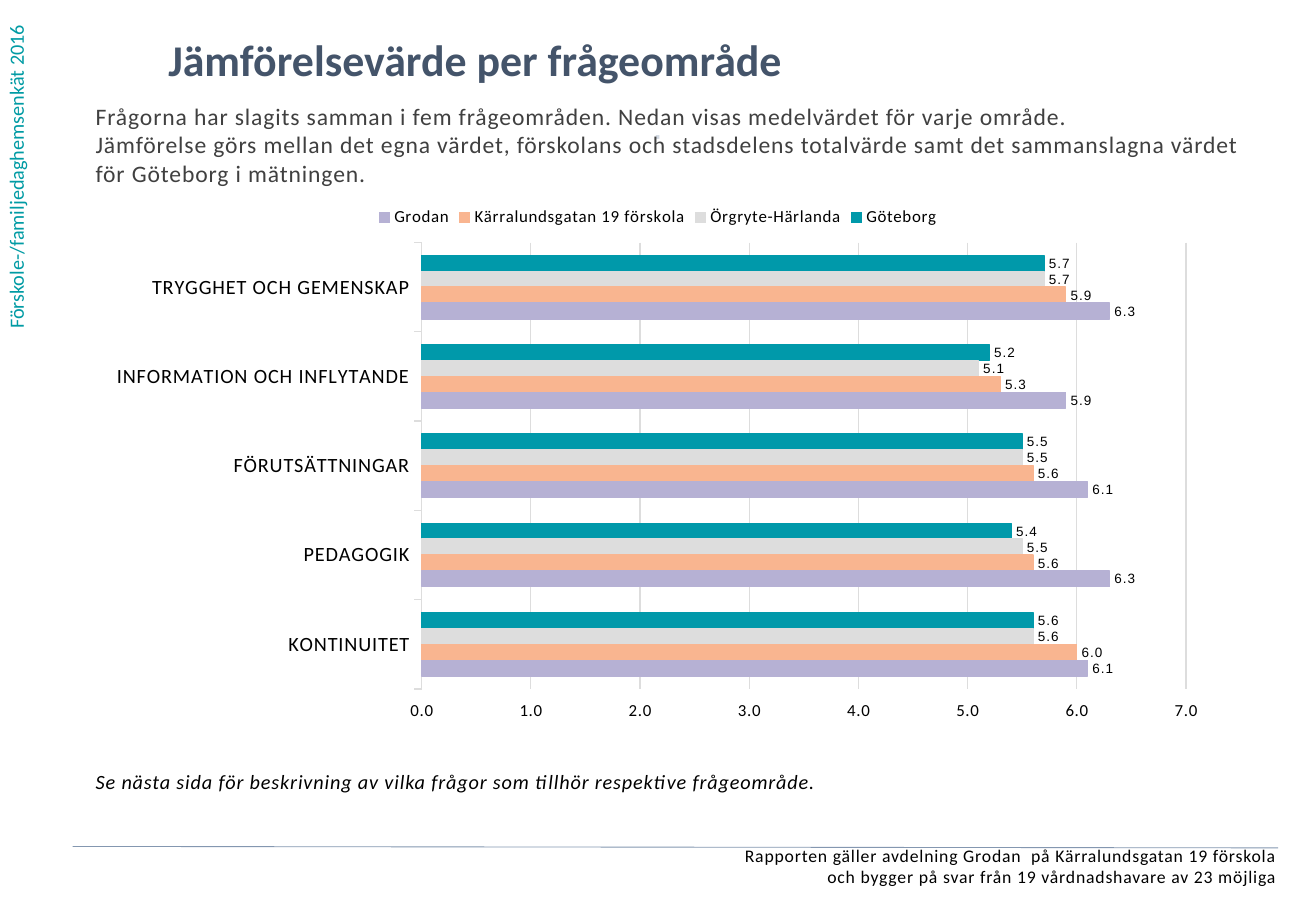
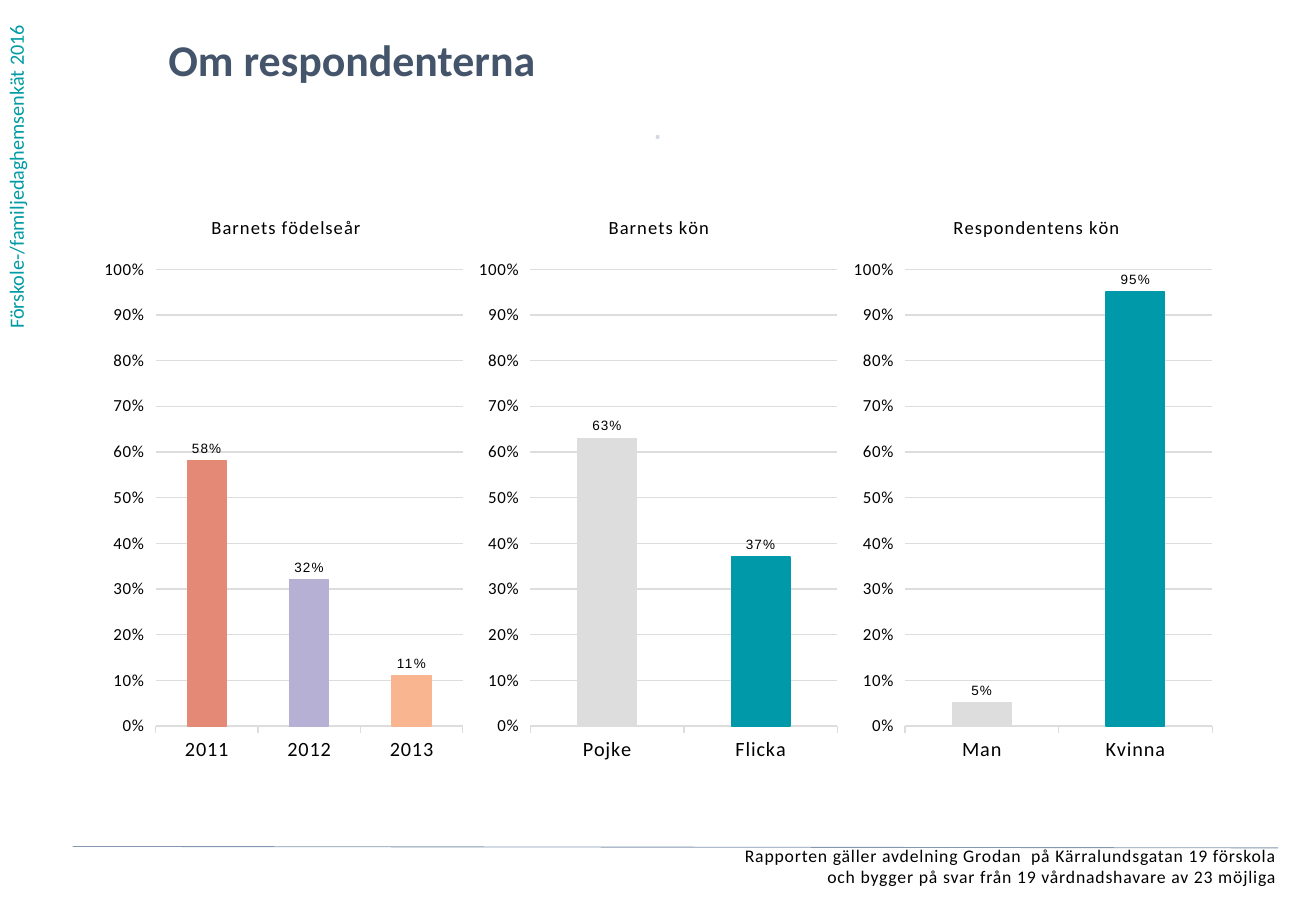
from lxml import etree
from pptx import Presentation
from pptx.chart.data import CategoryChartData
from pptx.dml.color import RGBColor
from pptx.enum.chart import XL_CHART_TYPE, XL_LABEL_POSITION, XL_LEGEND_POSITION, XL_TICK_LABEL_POSITION
from pptx.enum.shapes import MSO_CONNECTOR
from pptx.enum.text import PP_ALIGN
from pptx.oxml.ns import qn
from pptx.util import Cm, Pt

BAR, COLUMN = XL_CHART_TYPE.BAR_CLUSTERED, XL_CHART_TYPE.COLUMN_CLUSTERED
LEFT, CENTER, RIGHT = PP_ALIGN.LEFT, PP_ALIGN.CENTER, PP_ALIGN.RIGHT
OUTSIDE = XL_LABEL_POSITION.OUTSIDE_END
TOP = XL_LEGEND_POSITION.TOP
HIGH = XL_TICK_LABEL_POSITION.HIGH
STRAIGHT = MSO_CONNECTOR.STRAIGHT

COLORS = {
    "side": "009BA4", "title": "44546A", "intro": "404040", "text": "000000",
    "dot": "D2D9E2", "rule": "8497B0", "teal": "0099AA", "gray": "DDDDDD",
    "peach": "F9B590", "lilac": "B6B1D4", "coral": "E58977",
}
FONT, LABEL_FONT = "Calibri", "Arial"
SIDE_TEXT = "Förskole-/familjedaghemsenkät 2016"
FOOTER = ["Rapporten gäller avdelning Grodan  på Kärralundsgatan 19 förskola",
          "och bygger på svar från 19 vårdnadshavare av 23 möjliga"]

CONTENT_LEFT, CONTENT_TOP, CONTENT_WIDTH = 2, 4.06, 23.5
COLUMN_WIDTH = CONTENT_WIDTH / 3


def color(name):
    return RGBColor.from_string(COLORS[name])


def paint(fmt, name):
    """Give a chart element the same fill and outline colour."""
    fmt.fill.solid()
    fmt.fill.fore_color.rgb = color(name)
    outline(fmt.line, name)


def outline(line, name, width=0.75):
    line.color.rgb = color(name)
    line.width = Pt(width)


def set_layout(parent, index, inner=False, **fractions):
    """Place a chart part by fractions of the chart area."""
    for old in parent.findall(qn("c:layout")):
        parent.remove(old)
    layout = etree.Element(qn("c:layout"))
    manual = etree.SubElement(layout, qn("c:manualLayout"))
    values = {"layoutTarget": "inner"} if inner else {}
    values.update(xMode="edge", yMode="edge", **fractions)
    for tag, value in values.items():
        etree.SubElement(manual, qn(f"c:{tag}")).set("val", str(value))
    parent.insert(index, layout)


class Deck:
    def __init__(self):
        self.prs = Presentation()
        self.prs.slide_width, self.prs.slide_height = Cm(27.51), Cm(19.05)
        self.slide = None

    def add_slide(self, title):
        self.slide = self.prs.slides.add_slide(self.prs.slide_layouts[6])
        side = self.text([SIDE_TEXT], -0.05, 0, 1.02, 7.13, 12, "side",
                         spacing=0, inset=None)
        side.text_frame._txBody.bodyPr.set("vert", "vert270")
        self.text([title], 3.52, 0.69, 21.18, 1.45, 26, "title", bold=True, spacing=0)
        self.text(FOOTER, 0.27, 17.66, 26.42, 1.09, 10.5, align=RIGHT)
        self.text(["⋅"], CONTENT_LEFT + COLUMN_WIDTH, 2.59, COLUMN_WIDTH, 0.99, 12,
                  "dot", bold=True, align=CENTER)
        self.line(1.52, 17.7, 26.72, 17.73)

    def text(self, lines, x, y, w, h, size, name="text", bold=False, italic=False,
             align=LEFT, spacing=50, inset=0):
        """Add a text box; spacing is in hundredths of a point, inset None keeps the default."""
        sp = self.slide.shapes.add_textbox(Cm(x), Cm(y), Cm(w), Cm(h))
        tf = sp.text_frame
        tf.word_wrap = True
        if inset is not None:
            tf.margin_left = tf.margin_right = tf.margin_top = tf.margin_bottom = Cm(inset)
        tf.text = "\n".join(lines)
        for p in tf.paragraphs:
            p.alignment = align
            for r in p.runs:
                r.font.name, r.font.size = FONT, Pt(size)
                r.font.bold, r.font.italic = bold, italic
                r.font.color.rgb = color(name)
                r._r.get_or_add_rPr().set("spc", str(spacing))
        return sp

    def line(self, x1, y1, x2, y2):
        cxn = self.slide.shapes.add_connector(STRAIGHT, Cm(x1), Cm(y1), Cm(x2), Cm(y2))
        outline(cxn.line, "rule", 0.5)
        etree.SubElement(cxn._element.spPr, qn("a:effectLst"))

    def chart(self, kind, x, w, h, categories, series, number_format, maximum, unit, plot_box,
              title=None, title_x=0, point_colors=()):
        """Add a bar or column chart; series holds (name, colour, values)."""
        data = CategoryChartData(number_format=number_format)
        data.categories = categories
        for name, _, values in series:
            data.add_series(name, values)
        chart = self.slide.shapes.add_chart(
            kind, Cm(x), Cm(CONTENT_TOP), Cm(w), Cm(h), data).chart
        chart.font.name, chart.font.size = FONT, Pt(10)
        chart.font.color.rgb = color("text")

        chart.has_title = title is not None
        if title:
            tf = chart.chart_title.text_frame
            tf.text = title
            font = tf.paragraphs[0].runs[0].font
            font.name, font.size, font.bold = FONT, Pt(11), False
            font.color.rgb = color("text")
            chart.chart_title.include_in_layout = False
            set_layout(chart.chart_title._element, 1, x=title_x, y=0.03)

        chart.has_legend = len(series) > 1
        if chart.has_legend:
            chart.legend.position = TOP
            chart.legend.include_in_layout = False
            chart.legend.font.size = Pt(10)

        self.axes(chart, number_format, maximum, unit)
        plot = chart.plots[0]
        plot.gap_width, plot.overlap, plot.vary_by_categories = 162, 0, False
        for ser, (_, name, _) in zip(plot.series, series):
            paint(ser.format, name)
            labels = ser.data_labels
            labels.show_value, labels.position = True, OUTSIDE
            labels.number_format, labels.number_format_is_linked = number_format, False
            labels.font.name, labels.font.size = LABEL_FONT, Pt(8)
            labels.font.color.rgb = color("text")
            for i, point_color in enumerate(point_colors):
                paint(ser.points[i].format, point_color)

        chart_space = chart._chartSpace
        set_layout(chart_space.chart.plotArea, 0, inner=True, **plot_box)
        for props in chart_space.iter(qn("a:defRPr"), qn("a:rPr")):
            props.set("spc", "50")

    def axes(self, chart, number_format, maximum, unit):
        """Style both axes; the reversed categories put the HIGH labels at the left or bottom."""
        cat, val = chart.category_axis, chart.value_axis
        cat.reverse_order = True
        cat.tick_labels.font.size = Pt(12)
        outline(cat.format.line, "gray")
        val.minimum_scale, val.maximum_scale, val.major_unit = 0, maximum, unit
        val.tick_label_position = HIGH
        val.tick_labels.font.size = Pt(10)
        val.tick_labels.number_format = number_format
        val.tick_labels.number_format_is_linked = False
        val.format.line.fill.background()
        outline(val.major_gridlines.format.line, "gray")


def area_slide(deck):
    deck.add_slide("Jämförelsevärde per frågeområde")
    deck.text(["Frågorna har slagits samman i fem frågeområden. "
               "Nedan visas medelvärdet för varje område.",
               "Jämförelse görs mellan det egna värdet, förskolans och stadsdelens totalvärde "
               "samt det sammanslagna värdet för Göteborg i mätningen."],
              CONTENT_LEFT, 2.13, 24.03, 2.57, 14, "intro")
    deck.text(["Se nästa sida för beskrivning av vilka frågor som tillhör "
               "respektive frågeområde."],
              CONTENT_LEFT, 16.08, CONTENT_WIDTH, 0.8, 12, italic=True)
    deck.chart(
        BAR, CONTENT_LEFT, CONTENT_WIDTH, 11.25,
        ["TRYGGHET OCH GEMENSKAP", "INFORMATION OCH INFLYTANDE", "FÖRUTSÄTTNINGAR",
         "PEDAGOGIK", "KONTINUITET"],
        [("Göteborg", "teal", [5.7, 5.2, 5.5, 5.4, 5.6]),
         ("Örgryte-Härlanda", "gray", [5.7, 5.1, 5.5, 5.5, 5.6]),
         ("Kärralundsgatan 19 förskola", "peach", [5.9, 5.3, 5.6, 5.6, 6.0]),
         ("Grodan", "lilac", [6.3, 5.9, 6.1, 6.3, 6.1])],
        "0.0;0.0", 7, 1, {"x": 0.29, "y": 0.09, "w": 0.68, "h": 0.83})


def respondent_slide(deck):
    deck.add_slide("Om respondenterna")
    charts = [
        ("Barnets födelseår", 0.3, ["2013", "2012", "2011"], [0.11, 0.32, 0.58],
         ["peach", "lilac", "coral"]),
        ("Barnets kön", 0.36, ["Flicka", "Pojke"], [0.37, 0.63], ["teal", "gray"]),
        ("Respondentens kön", 0.28, ["Kvinna", "Man"], [0.95, 0.05], ["teal", "gray"]),
    ]
    for i, (title, title_x, categories, values, point_colors) in enumerate(charts):
        deck.chart(COLUMN, CONTENT_LEFT + i * COLUMN_WIDTH, COLUMN_WIDTH, 12.09, categories,
                   [("Series 1", "teal", values)], "0%;0%", 1, 0.1,
                   {"x": 0.16, "y": 0.13, "w": 0.82, "h": 0.79},
                   title, title_x, point_colors)


def main():
    deck = Deck()
    area_slide(deck)
    respondent_slide(deck)
    deck.prs.save("out.pptx")


if __name__ == "__main__":
    main()
